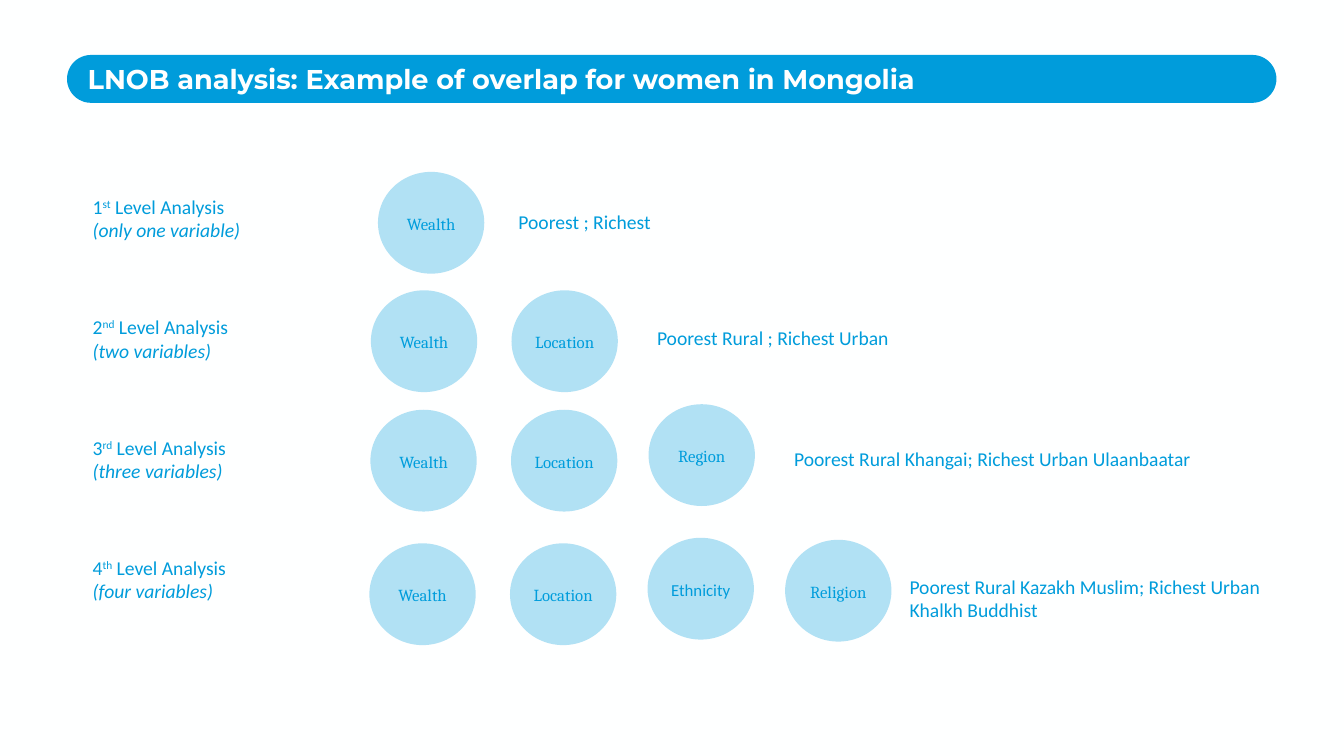
from pptx import Presentation
from pptx.dml.color import RGBColor
from pptx.enum.shapes import MSO_SHAPE
from pptx.enum.text import MSO_ANCHOR, PP_ALIGN
from pptx.oxml.ns import qn
from pptx.util import Inches, Pt
from lxml import etree

ROUNDED, OVAL = MSO_SHAPE.ROUNDED_RECTANGLE, MSO_SHAPE.OVAL
MIDDLE, LEFT, CENTER = MSO_ANCHOR.MIDDLE, PP_ALIGN.LEFT, PP_ALIGN.CENTER

COLORS = {"background": "FEFFFF", "blue": "009CDB", "circle": "009DDC"}
TITLE_FONT = {"name": "Montserrat", "size": Pt(38.8), "bold": True}
BODY_FONT = {"name": "Calibri", "size": Pt(28)}
CIRCLE_FONT = {"name": "Cambria", "size": Pt(24)}

MARGIN = 1.74
LABEL_TOP, LABEL_STEP = 3.81, 2.39
CIRCLE_SIZE = (2.11, 2.02)
CIRCLE_COLUMNS = [(7.33, 0), (10.12, 0), (12.85, -0.11), (15.58, -0.07)]  # left, drop

# ordinal, suffix, note, circle shift, circle top, variables, example, example box
LEVELS = [
    ("1", "st", "(only one variable)", 0.17, 3.41, ["Wealth"],
     "Poorest ; Richest", (10.19, 4.12, 7.5, 0.57)),
    ("2", "nd", "(two variables)", 0.03, 5.76, ["Wealth", "Location"],
     "Poorest Rural ; Richest Urban", (12.94, 6.41, 7.5, 0.57)),
    ("3", "rd", "(three variables)", 0.02, 8.13, ["Wealth", "Location", "Region"],
     "Poorest Rural Khangai; Richest Urban Ulaanbaatar", (15.66, 8.81, 8.42, 0.57)),
    ("4", "th", "(four variables)", 0, 10.78,
     ["Wealth", "Location", "Ethnicity", "Religion"],
     "Poorest Rural Kazakh Muslim; Richest Urban Khalkh Buddhist",
     (17.95, 11.35, 7.5, 1.04)),
]


def rgb(name):
    return RGBColor.from_string(COLORS[name])


def add_run(p, text, font, color="blue", **extra):
    r = p.add_run()
    r.text = text
    for key, value in {**font, **extra}.items():
        setattr(r.font, key, value)
    r.font.color.rgb = rgb(color)
    return r


def add_filled_shape(slide, kind, box, color):
    sp = slide.shapes.add_shape(kind, *map(Inches, box))
    sp.shadow.inherit = False
    sp.fill.solid()
    sp.fill.fore_color.rgb = rgb(color)
    sp.line.fill.background()
    return sp


def add_text_box(slide, box):
    tf = slide.shapes.add_textbox(*map(Inches, box)).text_frame
    tf.word_wrap = True
    return tf


def add_title(slide, text):
    bar = add_filled_shape(slide, ROUNDED, (1.33, 1.09, 24, 0.95), "blue")
    bar.adjustments[0] = 0.5
    title = slide.shapes.title
    title._element.addprevious(bar._element)  # the bar lies behind the title
    box = zip(("left", "top", "width", "height"), (MARGIN, 1.23, 23.22, 0.65))
    for side, value in box:
        setattr(title, side, Inches(value))
    tf = title.text_frame
    for side in ("left", "top", "right", "bottom"):
        setattr(tf, f"margin_{side}", 0)
    tf.vertical_anchor = MIDDLE
    p = tf.paragraphs[0]
    p.alignment = LEFT
    add_run(p, text, TITLE_FONT, "background")


def add_level_label(slide, top, ordinal, suffix, note):
    tf = add_text_box(slide, (MARGIN, top, 3.5, 1.04))
    p = tf.paragraphs[0]
    add_run(p, ordinal, BODY_FONT)
    raised = add_run(p, suffix, BODY_FONT)
    raised.font._element.set("baseline", "30000")
    add_run(p, " Level Analysis", BODY_FONT)
    add_run(tf.add_paragraph(), note, BODY_FONT, italic=True)


def add_circle(slide, left, top, text):
    sp = add_filled_shape(slide, OVAL, (left, top, *CIRCLE_SIZE), "circle")
    fill_color = sp._element.spPr.find(qn("a:solidFill"))[0]
    etree.SubElement(fill_color, qn("a:alpha"), val="30000")
    tf = sp.text_frame
    tf.word_wrap = True
    tf.vertical_anchor = MIDDLE
    p = tf.paragraphs[0]
    p.alignment, p.line_spacing, p.space_after = CENTER, 1.07, Pt(8)
    if text == "Ethnicity":
        add_run(p, text, CIRCLE_FONT, name="Calibri")
    else:
        add_run(p, text, CIRCLE_FONT, "circle")


def main():
    prs = Presentation()
    prs.slide_width, prs.slide_height = Inches(26.67), Inches(15)
    slide = prs.slides.add_slide(prs.slide_layouts[5])
    slide.background.fill.solid()
    slide.background.fill.fore_color.rgb = rgb("background")

    add_title(slide, "LNOB analysis: Example of overlap for women in Mongolia")
    for row, level in enumerate(LEVELS):
        ordinal, suffix, note, shift, top, variables, example, box = level
        add_level_label(slide, LABEL_TOP + row * LABEL_STEP, ordinal, suffix, note)
        add_run(add_text_box(slide, box).paragraphs[0], example, BODY_FONT)
        for (left, drop), variable in zip(CIRCLE_COLUMNS, variables):
            add_circle(slide, left + shift, top + drop, variable)

    prs.save("out.pptx")


if __name__ == "__main__":
    main()
